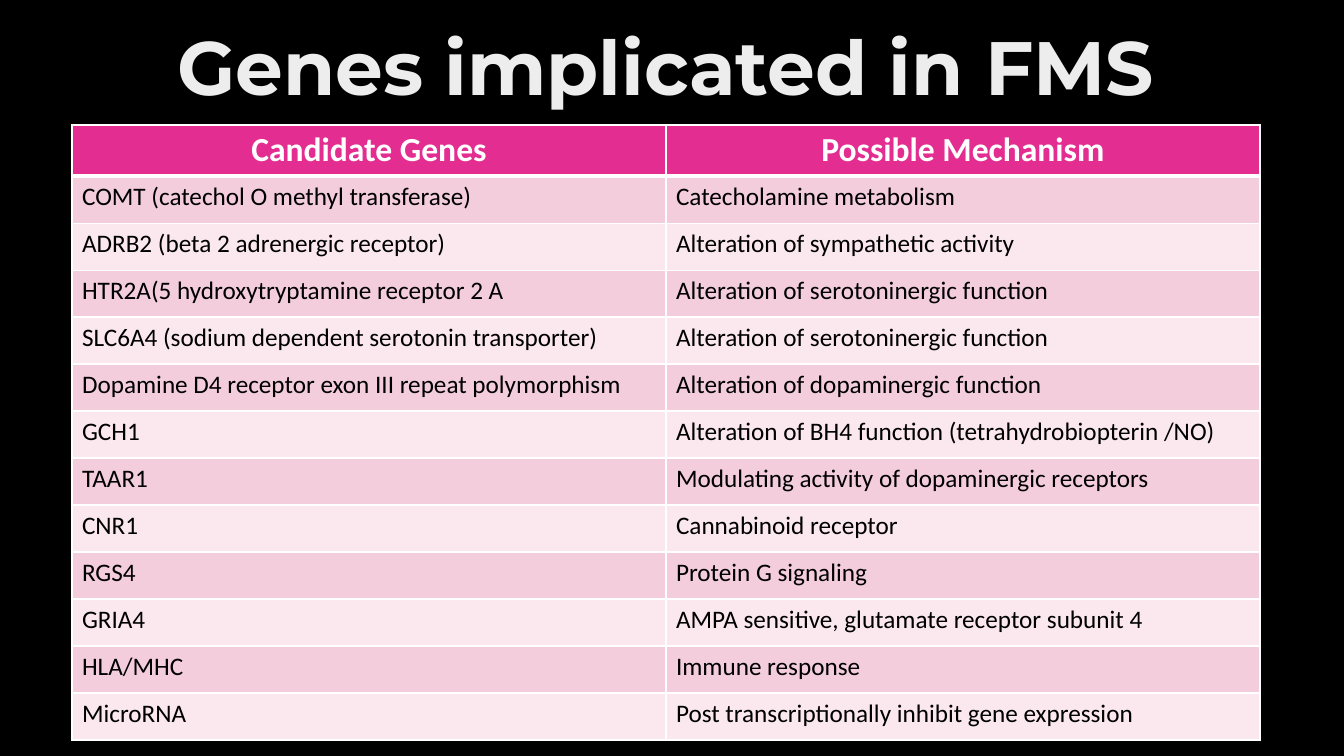
"""Build the slide listing the genes implicated in FMS."""
from lxml import etree
from pptx import Presentation
from pptx import util as u
from pptx.dml.color import RGBColor
from pptx.enum import text
from pptx.oxml.ns import qn

EMU_PER_PX = 914400 / 100.8
WHITE, BLACK, SILVER = "FFFFFF", "000000", "EDEDED"
MAGENTA, ROSE, BLUSH = "E32D91", "F4CDDC", "FAE8EE"
HEADER_HEIGHT = 51

GENES = [
    ("Candidate Genes", "Possible Mechanism"),
    ("COMT (catechol O methyl transferase)", "Catecholamine metabolism"),
    ("ADRB2 (beta 2 adrenergic receptor)", "Alteration of sympathetic activity"),
    ("HTR2A(5 hydroxytryptamine receptor 2 A", "Alteration of serotoninergic function"),
    ("SLC6A4 (sodium dependent serotonin transporter)", "Alteration of serotoninergic function"),
    ("Dopamine D4 receptor exon III repeat polymorphism", "Alteration of dopaminergic function"),
    ("GCH1", "Alteration of BH4 function (tetrahydrobiopterin /NO)"),
    ("TAAR1", "Modulating activity of dopaminergic receptors"),
    ("CNR1", "Cannabinoid receptor"),
    ("RGS4", "Protein G signaling"),
    ("GRIA4", "AMPA sensitive, glutamate receptor subunit 4"),
    ("HLA/MHC", "Immune response"),
    ("MicroRNA", "Post transcriptionally inhibit gene expression"),
]


def px(length):
    """Turn pixels into EMU."""
    return u.Emu(round(length * EMU_PER_PX))


def color(value):
    """Turn a hex string into a colour."""
    return RGBColor.from_string(value)


def style_font(para, name, size, value, bold):
    """Format every run of a paragraph."""
    for span in para.runs:
        span.font.name = name
        span.font.size = u.Pt(size)
        span.font.bold = bold
        span.font.color.rgb = color(value)


def add_borders(cell, top, bottom):
    """Draw white lines on the four sides of a cell, widths in points."""
    properties = cell._tc.get_or_add_tcPr()
    for side, width in (("L", 1), ("R", 1), ("T", top), ("B", bottom)):
        line = etree.SubElement(properties, qn(f"a:ln{side}"), w=str(u.Pt(width)))
        fill = etree.SubElement(line, qn("a:solidFill"))
        etree.SubElement(fill, qn("a:srgbClr"), val=WHITE)


def place_title(page, box, words):
    """Move the title placeholder into the box and format it."""
    title = page.shapes.title
    title.left, title.top, title.width, title.height = map(px, box)
    frame = title.text_frame
    frame.text = words
    frame.word_wrap = True
    frame.auto_size = text.MSO_AUTO_SIZE.NONE
    frame.vertical_anchor = text.MSO_ANCHOR.MIDDLE
    para = frame.paragraphs[0]
    para.alignment = text.PP_ALIGN.CENTER
    para.line_spacing = 0.9
    style_font(para, "Montserrat", 54, SILVER, True)


def fill_cell(cell, words, row):
    """Write and format one cell according to its row."""
    header = row == 0
    add_borders(cell, 3 if row == 1 else 1, 3 if header else 1)
    cell.fill.solid()
    cell.fill.fore_color.rgb = color(MAGENTA if header else ROSE if row % 2 else BLUSH)
    cell.text_frame.text = words
    para = cell.text_frame.paragraphs[0]
    para.alignment = text.PP_ALIGN.CENTER if header else text.PP_ALIGN.LEFT
    style_font(para, "Calibri", 24 if header else 18, WHITE if header else BLACK, header)


def place_gene_table(page, box, rows):
    """Fill the box with a header row and equal body rows."""
    left, top, width, height = box
    columns = len(rows[0])
    table = page.shapes.add_table(len(rows), columns, *map(px, box)).table
    for column in table.columns:
        column.width = px(width / columns)
    body_height = (height - HEADER_HEIGHT) / (len(rows) - 1)
    for index, row in enumerate(rows):
        table.rows[index].height = px(body_height if index else HEADER_HEIGHT)
        for cell, words in zip(table.rows[index].cells, row):
            fill_cell(cell, words, index)


def main():
    """Build and save the deck."""
    deck = Presentation()
    deck.slide_width, deck.slide_height = px(1344), px(756)
    page = deck.slides.add_slide(deck.slide_layouts[5])
    page.background.fill.solid()
    page.background.fill.fore_color.rgb = color(BLACK)
    place_title(page, (4, 17, 1323, 108), "Genes implicated in FMS")
    place_gene_table(page, (72, 125, 1188, 615), GENES)
    deck.save("out.pptx")


if __name__ == "__main__":
    main()
